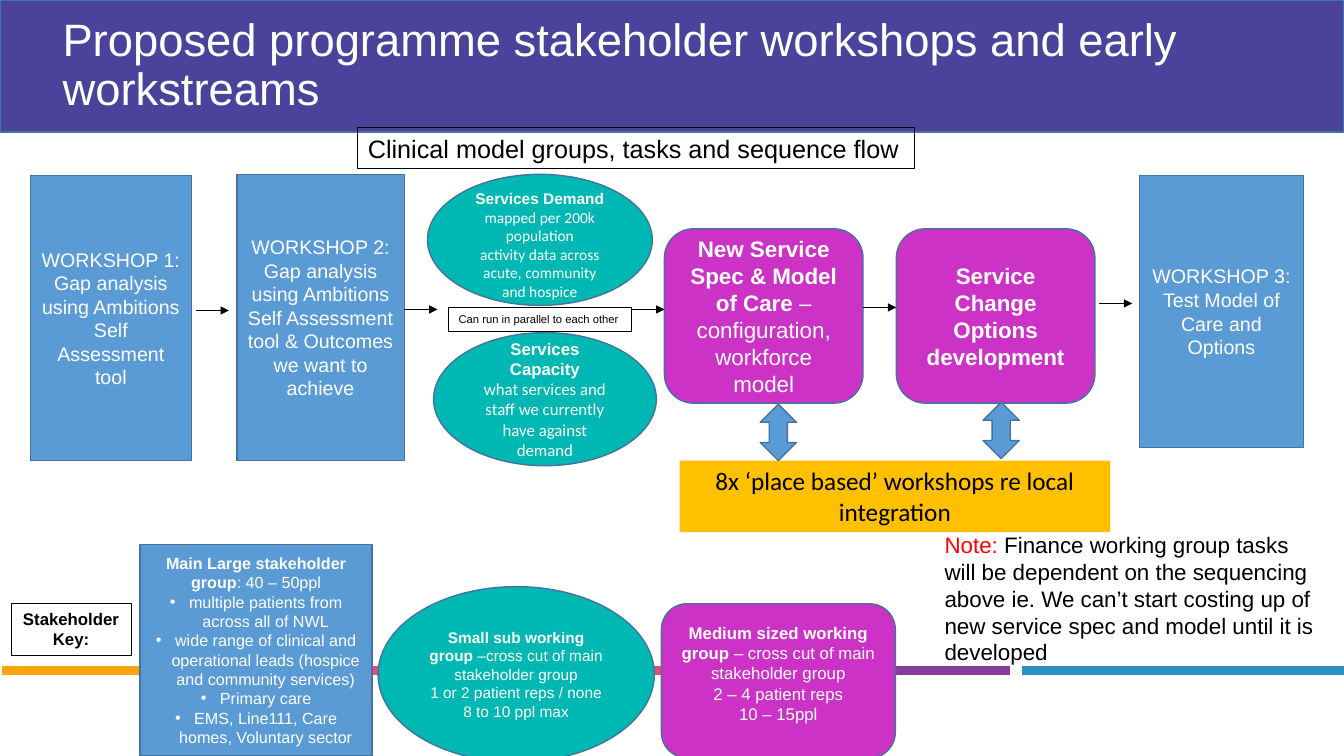
from dataclasses import dataclass

from lxml.etree import SubElement
from pptx import Presentation
from pptx.dml.color import RGBColor
from pptx.enum.shapes import MSO_CONNECTOR, MSO_SHAPE as SHAPE
from pptx.enum.text import MSO_ANCHOR as ANCHOR, PP_ALIGN as ALIGN
from pptx.oxml.ns import qn
from pptx.util import Inches, Pt

BLUE, TEAL, MAGENTA, AMBER, PURPLE = "5B9BD5", "00B8B3", "CC32C5", "FFC000", "4B429B"
EDGE, WHITE, BLACK, RED = "43739E", "FFFFFF", "000000", "FF0000"


@dataclass
class Words:
    text: str
    bold: bool = False
    font: str = "Arial"
    color: str = ""
    bullet: bool = False


def rgb(value):
    return RGBColor.from_string(value)


def add_bullet(paragraph):
    properties = paragraph._p.get_or_add_pPr()
    properties.set("marL", str(Inches(0.19)))
    properties.set("indent", str(-Inches(0.19)))
    SubElement(properties, qn("a:buFont"), typeface="Arial")
    SubElement(properties, qn("a:buChar"), char="•")


def write(frame, paragraphs, size, color, align=ALIGN.CENTER, anchor=ANCHOR.MIDDLE):
    frame.word_wrap = True
    frame.vertical_anchor = anchor
    for index, pieces in enumerate(paragraphs):
        paragraph = frame.add_paragraph() if index else frame.paragraphs[0]
        paragraph.alignment = align
        if pieces[0].bullet:
            add_bullet(paragraph)
        for piece in pieces:
            run = paragraph.add_run()
            run.text = piece.text
            run.font.size = Pt(size)
            run.font.name = piece.font
            run.font.bold = piece.bold
            run.font.color.rgb = rgb(piece.color or color)


def add_panel(slide, kind, box, fill=None, edge=EDGE, weight=1):
    panel = slide.shapes.add_shape(kind, *map(Inches, box))
    panel.shadow.inherit = False
    if fill:
        panel.fill.solid()
        panel.fill.fore_color.rgb = rgb(fill)
    else:
        panel.fill.background()
    if edge:
        panel.line.color.rgb = rgb(edge)
        panel.line.width = Pt(weight)
    else:
        panel.line.fill.background()
    return panel


def add_step(slide, kind, box, fill, size, paragraphs):
    frame = add_panel(slide, kind, box, fill).text_frame
    write(frame, paragraphs, size, WHITE)
    return frame


def add_label(slide, box, size, paragraphs, align=ALIGN.LEFT):
    frame = add_panel(slide, SHAPE.RECTANGLE, box, None, BLACK, 0.75).text_frame
    write(frame, paragraphs, size, BLACK, align, ANCHOR.TOP)
    return frame


def add_line(slide, start, end, color, weight):
    line = slide.shapes.add_connector(MSO_CONNECTOR.STRAIGHT, *map(Inches, start + end))
    line.line.color.rgb = rgb(color)
    line.line.width = Pt(weight)
    SubElement(line._element.spPr, qn("a:effectLst"))
    return line


def add_arrow(slide, left, top):
    arrow = add_line(slide, (left, top), (left + 0.33, top), BLACK, 0.5)
    SubElement(arrow.line._get_or_add_ln(), qn("a:tailEnd"), type="triangle")


def add_heading(slide):
    add_panel(slide, SHAPE.RECTANGLE, (0, 0, 13.33, 1.31), PURPLE)
    stripes = [(0.02, "F9A50E"), (3.4, "F24678"), (6.79, "853E9A"), (10.14, "2A90C0")]
    for left, color in stripes:
        add_line(slide, (left, 6.65), (left + 3.23, 6.65), color, 6)
    title = slide.shapes.title
    title.left, title.top, title.width, title.height = map(Inches, (0.52, 0.36, 12.99, 0.59))
    heading = "Proposed programme stakeholder workshops and early workstreams"
    write(title.text_frame, [[Words(heading)]], 32.4, WHITE, ALIGN.LEFT)
    title.text_frame.paragraphs[0].line_spacing = 0.9
    title.element.getparent().append(title.element)


def add_flow(slide):
    workshops = [
        ((0.3, 1.74, 1.6, 2.83), "WORKSHOP 1: Gap analysis using Ambitions Self Assessment tool"),
        ((2.35, 1.73, 1.66, 2.84), "WORKSHOP 2: Gap analysis using Ambitions Self Assessment "
                                   "tool & Outcomes we want to achieve"),
        ((11.3, 1.74, 1.63, 2.7), "WORKSHOP 3: Test Model of Care and Options"),
    ]
    for box, task in workshops:
        add_step(slide, SHAPE.RECTANGLE, box, BLUE, 14, [[Words(task)]])

    demand = add_step(slide, SHAPE.OVAL, (4.24, 1.73, 2.23, 1.3), TEAL, 11, [
        [Words("Services Demand ", True), Words("mapped per 200k population", font="Calibri")],
        [Words("activity data across acute, community and hospice", font="Calibri")],
    ])
    demand.margin_top = Inches(0.15)
    add_step(slide, SHAPE.OVAL, (4.3, 3.3, 2.21, 1.32), TEAL, 12, [
        [Words("Services Capacity", True)],
        [Words("what services and staff we currently have against demand", font="Calibri")],
    ])
    add_step(slide, SHAPE.ROUNDED_RECTANGLE, (6.59, 2.27, 1.97, 1.73), MAGENTA, 16, [
        [Words("New Service Spec & Model of Care ", True),
         Words("– configuration, workforce model")],
    ])
    add_step(slide, SHAPE.ROUNDED_RECTANGLE, (8.89, 2.27, 1.97, 1.73), MAGENTA, 16,
             [[Words("Service Change Options development", True)]])


def add_key(slide):
    add_label(slide, (0.11, 5.99, 1.19, 0.51), 12,
              [[Words("Stakeholder", True)], [Words("Key:", True)]], ALIGN.CENTER)
    members = [
        "multiple patients from across all of NWL",
        "wide range of clinical and operational leads (hospice and community services)",
        "Primary care",
        "EMS, Line111, Care homes, Voluntary sector",
    ]
    add_step(slide, SHAPE.RECTANGLE, (1.39, 5.4, 2.3, 2.1), BLUE, 11.5,
             [[Words("Main Large stakeholder group", True), Words(": 40 – 50ppl")]]
             + [[Words(member, bullet=True)] for member in members])
    add_step(slide, SHAPE.OVAL, (3.75, 5.82, 2.74, 1.74), TEAL, 11, [
        [Words("Small sub working group ", True), Words("–cross cut of main stakeholder group")],
        [Words("1 or 2 patient reps / none")],
        [Words("8 to 10 ppl max")],
    ])
    medium = add_step(slide, SHAPE.ROUNDED_RECTANGLE, (6.56, 5.99, 2.32, 1.53), MAGENTA, 12, [
        [Words("Medium sized working group ", True),
         Words("– cross cut of main stakeholder group")],
        [Words("2 – 4 patient reps")],
        [Words("10 – 15ppl")],
    ])
    medium.margin_bottom = Inches(0.2)


def add_note(slide):
    note = slide.shapes.add_textbox(*map(Inches, (9.27, 5.22, 3.94, 1.45)))
    write(note.text_frame, [[
        Words("Note: ", color=RED),
        Words("Finance working group tasks will be dependent on the sequencing above ie. "
              "We can’t start costing up of new service spec and model until it is developed"),
    ]], 16, BLACK, ALIGN.LEFT, ANCHOR.TOP)


def add_links(slide):
    flow_label = add_label(slide, (3.55, 1.27, 5.52, 0.4), 18,
                           [[Words("Clinical model groups, tasks and sequence flow")]])
    flow_label.word_wrap = False
    add_label(slide, (4.45, 3.05, 1.81, 0.24), 8,
              [[Words("Can run in parallel to each other")]])
    for left, top in [(1.94, 3.08), (4.01, 3.07), (6.26, 3.07), (8.56, 3.05), (10.9, 3.01)]:
        add_arrow(slide, left, top)

    places = add_panel(slide, SHAPE.RECTANGLE, (6.74, 4.57, 4.27, 0.71), AMBER, None)
    write(places.text_frame,
          [[Words("8x ‘place based’ workshops re local integration", font="Calibri")]],
          18, BLACK, anchor=ANCHOR.TOP)
    for left, top in [(7.54, 4.01), (9.75, 3.99)]:
        add_panel(slide, SHAPE.UP_DOWN_ARROW, (left, top, 0.36, 0.56), BLUE)


def main():
    deck = Presentation()
    deck.slide_width, deck.slide_height = Inches(13.33), Inches(7.5)
    slide = deck.slides.add_slide(deck.slide_layouts[5])
    add_heading(slide)
    add_flow(slide)
    add_key(slide)
    add_note(slide)
    add_links(slide)
    deck.save("out.pptx")


if __name__ == "__main__":
    main()
